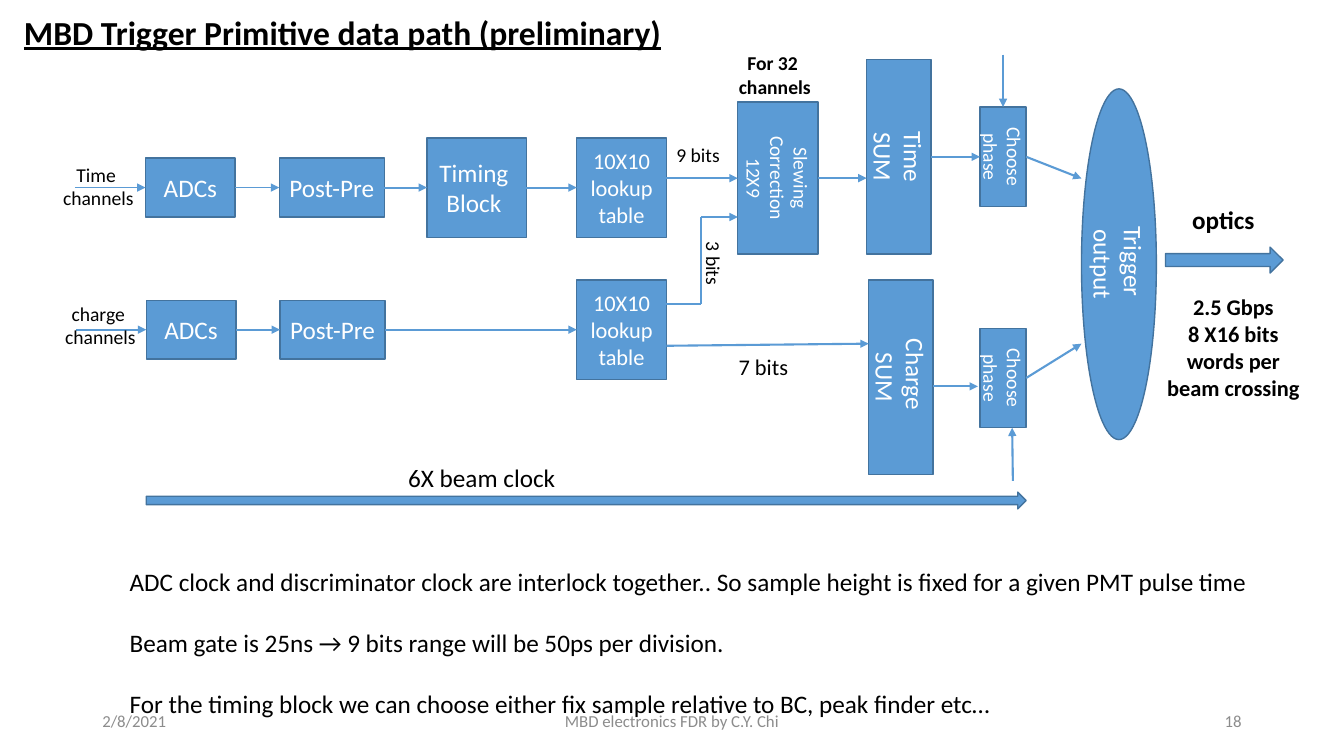
"""Build the MBD trigger primitive data path slide."""
from lxml.etree import SubElement
from pptx import Presentation
from pptx.dml.color import RGBColor
from pptx.enum.shapes import MSO_CONNECTOR, MSO_SHAPE
from pptx.enum.text import MSO_ANCHOR, PP_ALIGN
from pptx.oxml.ns import qn
from pptx.util import Pt

BLUE, EDGE, WHITE, BLACK, GRAY = "5B9BD5", "43739E", "FFFFFF", "000000", "8C8C8C"
LEFT, CENTER, RIGHT = PP_ALIGN.LEFT, PP_ALIGN.CENTER, PP_ALIGN.RIGHT
RECT, ARROW = MSO_SHAPE.RECTANGLE, MSO_SHAPE.RIGHT_ARROW


def color(target, value):
    target.rgb = RGBColor.from_string(value)


def write(frame, text, hue, align, gap=0, **format_values):
    for number, line in enumerate(text.split("\n")):
        paragraph = frame.paragraphs[0] if number == 0 else frame.add_paragraph()
        paragraph.alignment = align
        paragraph.space_before = Pt(gap if number else 0)
        run = paragraph.add_run()
        run.text = line
        color(run.font.color, hue)
        for name, value in format_values.items():
            setattr(run.font, name, value)
        run.font.name = "Calibri"


deck = Presentation()
deck.slide_width, deck.slide_height = Pt(960), Pt(540)
slide = deck.slides.add_slide(deck.slide_layouts[6])

TIME_ROW, CHARGE_ROW = 134, 235.5
blocks = {
    "trigger": (MSO_SHAPE.OVAL, 772.5, 63.5, 53.5, 250.5, "Trigger \noutput", 18, True),
    "timing": (RECT, 305, TIME_ROW - 35.5, 71, 71, "Timing \nBlock ", 18, False),
    "slewing": (RECT, 527, 73, 57.5, 108.5, "Slewing\nCorrection\n12X9", 14, True),
    "time sum": (RECT, 619, 42.5, 46, 139, "Time\nSUM", 18, True),
    "charge sum": (RECT, 620.5, 200, 46, 139, "Charge \nSUM", 18, True),
    "time phase": (RECT, 700, 76.5, 33, 71, "Choose\nphase", 14, True),
    "charge phase": (RECT, 700, 234.5, 33, 71, "Choose\nphase", 14, True),
    "beam clock": (ARROW, 104.5, 351.5, 628.5, 12, "", 18, False),
    "optics": (ARROW, 832.5, 176.5, 84, 18.5, "", 18, False),
}
for channel, row, shift in (("time", TIME_ROW, 0), ("charge", CHARGE_ROW, 0.5)):
    blocks[channel + " adc"] = (RECT, 104 + shift, row - 21, 64, 42, "ADCs", 18, False)
    blocks[channel + " post"] = (RECT, 199.5 + shift, row - 21, 75, 42, "Post-Pre", 18, False)
    blocks[channel + " lookup"] = (RECT, 412, row - 35.5, 64, 71, "10X10 lookup table", 16, False)

drawn = {}
for name, (kind, left, top, width, height, text, size, turned) in blocks.items():
    block = slide.shapes.add_shape(kind, Pt(left), Pt(top), Pt(width), Pt(height))
    block.shadow.inherit = False
    block.fill.solid()
    color(block.fill.fore_color, BLUE)
    color(block.line.color, EDGE)
    block.line.width = Pt(1)
    if text:
        block.text_frame.vertical_anchor = MSO_ANCHOR.MIDDLE
        write(block.text_frame, text, WHITE, CENTER, size=Pt(size))
    if turned:
        block.text_frame._txBody.bodyPr.set("vert", "vert")
    drawn[name] = block

TOP, WEST, EAST = 0, 1, 3
links = [
    ((53.5, TIME_ROW), ("time adc", WEST), 1.25, True),
    ((54.5, CHARGE_ROW), ("charge adc", WEST), 1.25, True),
    (("time adc", EAST), ("time post", WEST), 1.25, True),
    (("charge adc", EAST), ("charge post", WEST), 1.25, True),
    (("time post", EAST), ("timing", WEST), 1.5, True),
    (("timing", EAST), ("time lookup", WEST), 1.5, True),
    (("charge post", EAST), ("charge lookup", WEST), 1.5, True),
    ((476, 127.25), ("slewing", WEST), 1.5, True),
    (("slewing", EAST), (619, 127.25), 1.5, True),
    ((476, 217), (501, 217), 1.5, False),
    ((501, 217), (501, 155), 1.5, False),
    ((501, 155), (527, 155), 1.5, True),
    ((476, 247), (620.5, 245.5), 1.5, True),
    (("time sum", EAST), ("time phase", WEST), 1.5, True),
    ((666.5, 276), (698.5, 276), 1.5, True),
    ((716.5, 39), ("time phase", TOP), 1.5, True),
    ((723.5, 343.5), (723, 305.5), 1.5, True),
    (("time phase", EAST), (772.5, 127.5), 1.5, True),
    (("charge phase", EAST), (772.5, 245.5), 1.5, True),
]
for start, end, weight, pointed in links:
    start_joined, end_joined = isinstance(start[0], str), isinstance(end[0], str)
    x1, y1 = (0, 0) if start_joined else start
    x2, y2 = (0, 0) if end_joined else end
    link = slide.shapes.add_connector(MSO_CONNECTOR.STRAIGHT, Pt(x1), Pt(y1), Pt(x2), Pt(y2))
    if start_joined:
        link.begin_connect(drawn[start[0]], start[1])
    if end_joined:
        link.end_connect(drawn[end[0]], end[1])
    color(link.line.color, BLUE)
    link.line.width = Pt(weight)
    if pointed:
        SubElement(link.line._get_or_add_ln(), qn("a:tailEnd"), type="triangle")
    SubElement(link._element.spPr, qn("a:effectLst"))

notes = "\n".join([
    "ADC clock and discriminator clock are interlock together.. "
    "So sample height is fixed for a given PMT pulse time",
    "Beam gate is 25ns → 9 bits range will be 50ps per division.",
    "For the timing block we can choose either fix sample relative to BC, peak finder etc…",
])
title = "MBD Trigger Primitive data path (preliminary)"
rate = "2.5 Gbps\n8 X16 bits words per beam crossing"
labels = [
    (10, 5, 485.5, 36, title, LEFT, False, {"size": Pt(24), "bold": True, "underline": True}),
    (476, 98.5, 46, 24, "9 bits", LEFT, False, {"size": Pt(14)}),
    (487, 176.5, 46, 24, "3 bits", LEFT, False, {"size": Pt(14)}),
    (520.5, 248.5, 51, 26.5, "7 bits", LEFT, True, {"size": Pt(16)}),
    (284.5, 327, 121, 29, "6X beam clock", LEFT, False, {"size": Pt(18)}),
    (37.5, 112.5, 65.5, 41, "Time \nchannels", CENTER, False, {"size": Pt(14)}),
    (39, 212, 65.5, 41, "charge \nchannels", CENTER, False, {"size": Pt(14)}),
    (520.5, 33, 66, 41, "For 32 \nchannels", CENTER, False, {"size": Pt(14), "bold": True}),
    (844.5, 142.5, 60, 29, "optics", LEFT, False, {"size": Pt(18), "bold": True}),
    (826.5, 206, 109, 104.5, rate, CENTER, True, {"size": Pt(16), "bold": True}),
    (85.5, 401, 830, 116.5, notes, LEFT, True, {"size": Pt(18), "gap": 22}),
]
for left, top, width, height, text, align, wrapped, format_values in labels:
    label = slide.shapes.add_textbox(Pt(left), Pt(top), Pt(width), Pt(height))
    label.text_frame.word_wrap = wrapped
    write(label.text_frame, text, BLACK, align, **format_values)
    if text == "3 bits":
        label.rotation = 90

footers = [
    (66, 216, "2/8/2021", LEFT),
    (318, 324, "MBD electronics FDR by C.Y. Chi", CENTER),
    (678, 216, "18", RIGHT),
]
for left, width, text, align in footers:
    footer = slide.shapes.add_textbox(Pt(left), Pt(500.5), Pt(width), Pt(29))
    footer.text_frame.word_wrap = True
    footer.text_frame.vertical_anchor = MSO_ANCHOR.MIDDLE
    write(footer.text_frame, text, GRAY, align, size=Pt(12))

deck.save("out.pptx")
